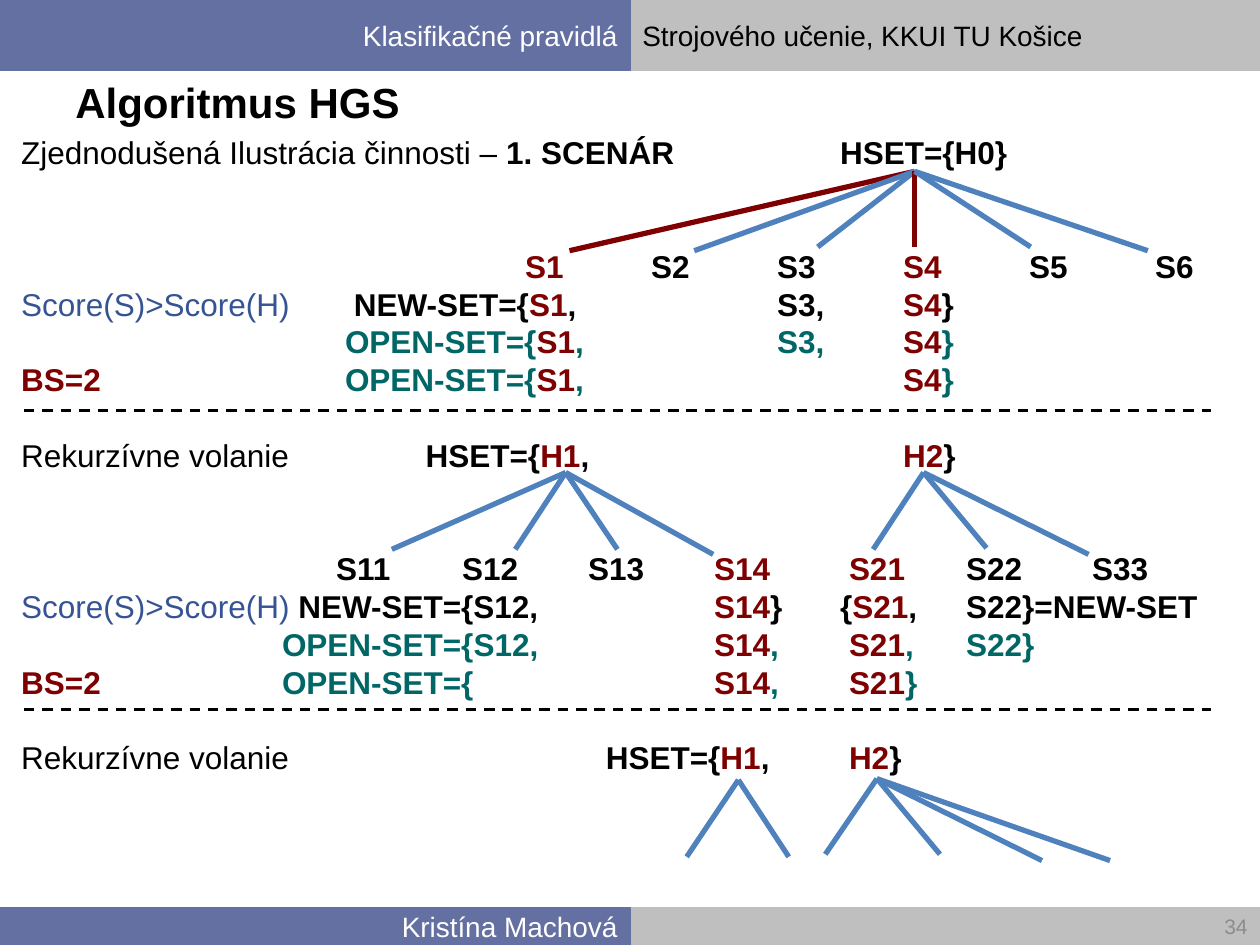
from dataclasses import dataclass

from lxml import etree
from pptx import Presentation
from pptx.dml.color import RGBColor
from pptx.enum.dml import MSO_LINE
from pptx.enum.shapes import MSO_CONNECTOR, MSO_SHAPE
from pptx.enum.text import MSO_ANCHOR, PP_ALIGN
from pptx.oxml.ns import qn
from pptx.util import Inches, Pt

LEFT, RIGHT = PP_ALIGN.LEFT, PP_ALIGN.RIGHT
TOP, MIDDLE = MSO_ANCHOR.TOP, MSO_ANCHOR.MIDDLE
RECTANGLE = MSO_SHAPE.RECTANGLE
STRAIGHT = MSO_CONNECTOR.STRAIGHT
DASH = MSO_LINE.DASH


@dataclass(frozen=True)
class Theme:
    font: str = "Arial"
    indigo: str = "6570A2"
    silver: str = "BFBFBF"
    white: str = "FFFFFF"
    black: str = "000000"
    gray: str = "8C8C8C"
    red: str = "7E0000"
    teal: str = "006666"
    navy: str = "365394"
    blue: str = "4F81BD"
    title: int = 24
    body: int = 18
    band: int = 16
    number: int = 12
    pitch: float = 21.6


THEME = Theme()
PLAIN = {"color": THEME.black}
BOLD = {"color": THEME.black, "bold": True}
RED = {"color": THEME.red, "bold": True}
TEAL = {"color": THEME.teal, "bold": True}
NAVY = {"color": THEME.navy}

SCORE = (0, [("Score(S)>Score(H)", NAVY)])
BEAM = (0, [("BS=2", RED)])
RECURSION = (0, [("Rekurzívne volanie", PLAIN)])

LINES = [
    (0, [(0, [("Zjednodušená Ilustrácia činnosti – ", PLAIN), ("1. SCENÁR", BOLD)]),
         (6.5, [("HSET={H0}", BOLD)])]),
    (2, [(stop, [(f"S{stop - 3}", RED if stop in (4, 7) else BOLD)]) for stop in range(4, 10)]),
    (0, [SCORE, (2.64, [("NEW-SET={", BOLD), ("S1", RED), (",", BOLD)]),
         (6, [("S3,", BOLD)]), (7, [("S4", RED), ("}", BOLD)])]),
    (0, [(2.57, [("OPEN-SET={", TEAL), ("S1", RED), (",", TEAL)]),
         (6, [("S3,", TEAL)]), (7, [("S4", RED), ("}", TEAL)])]),
    (0, [BEAM, (2.57, [("OPEN-SET={", TEAL), ("S1", RED), (",", TEAL)]),
         (7, [("S4", RED), ("}", TEAL)])]),
    (1, [RECURSION, (3.21, [("HSET={", BOLD), ("H1", RED), (",", BOLD)]),
         (7, [("H2", RED), ("}", BOLD)])]),
    (2, [(2.5, [("S11", BOLD)]), (3.5, [("S12", BOLD)]), (4.5, [("S13", BOLD)]),
         (5.5, [("S14", RED)]), (6.57, [("S21", RED)]), (7.5, [("S22", BOLD)]),
         (8.5, [("S33", BOLD)])]),
    (0, [SCORE, (2.2, [("NEW-SET={S12,", BOLD)]), (5.5, [("S14", RED), ("}", BOLD)]),
         (6.5, [("{", BOLD), ("S21", RED), (",", BOLD)]), (7.5, [("S22}=NEW-SET", BOLD)])]),
    (0, [(2.07, [("OPEN-SET={S12,", TEAL)]), (5.5, [("S14", RED), (",", TEAL)]),
         (6.57, [("S21", RED), (",", TEAL)]), (7.5, [("S22}", TEAL)])]),
    (0, [BEAM, (2.07, [("OPEN-SET={", TEAL)]), (5.5, [("S14", RED), (",", TEAL)]),
         (6.57, [("S21", RED), ("}", TEAL)])]),
    (1, [RECURSION, (4.64, [("HSET={", BOLD), ("H1", RED), (",", BOLD)]),
         (6.57, [("H2", RED), ("}", BOLD)])]),
]

TREES = [
    ((7.26, 1.36), [(4.52, 1.99), (5.51, 1.99), (6.49, 1.96),
                    (7.26, 1.96), (8.18, 1.96), (9.11, 1.99)], (0, 3)),
    ((4.49, 3.75), [(3.11, 4.36), (4.09, 4.36), (4.9, 4.36), (5.66, 4.4)], ()),
    ((7.33, 3.75), [(6.93, 4.36), (7.83, 4.35), (8.64, 4.4)], ()),
    ((5.86, 6.19), [(5.45, 6.8), (6.26, 6.8)], ()),
    ((6.96, 6.18), [(6.55, 6.78), (7.46, 6.78), (8.27, 6.83), (8.81, 6.83)], ()),
]


def add_text(para, text, color=THEME.black, size=THEME.body, bold=False, align=LEFT):
    para.alignment = align
    span = para.add_run()
    span.text = text
    span.font.name = THEME.font
    span.font.size = Pt(size)
    span.font.bold = bold
    span.font.color.rgb = RGBColor.from_string(color)


def add_box(page, box, anchor=MIDDLE):
    frame = page.shapes.add_textbox(*map(Inches, box)).text_frame
    frame.word_wrap = True
    frame.vertical_anchor = anchor
    return frame


def add_line(page, start, end, color, width, dash=None):
    line = page.shapes.add_connector(STRAIGHT, *map(Inches, (*start, *end)))
    line.line.color.rgb = RGBColor.from_string(color)
    line.line.width = Pt(width)
    if dash:
        line.line.dash_style = dash
    etree.SubElement(line._element.spPr, qn("a:effectLst"))


def add_panel(page, box, fill, text="", **style):
    panel = page.shapes.add_shape(RECTANGLE, *map(Inches, box))
    panel.shadow.inherit = False
    panel.fill.solid()
    panel.fill.fore_color.rgb = RGBColor.from_string(fill)
    panel.line.color.rgb = RGBColor.from_string(fill)
    panel.line.width = Pt(0.75)
    panel.text_frame.vertical_anchor = MIDDLE
    if text:
        add_text(panel.text_frame.paragraphs[0], text, size=THEME.band, **style)


def add_band(page, box, left_text, right_text=""):
    left, top, width, height = box
    half = width / 2
    add_panel(page, (left + half, top, half, height), THEME.silver, right_text)
    add_panel(page, (left, top, half, height), THEME.indigo, left_text,
              color=THEME.white, align=RIGHT)


def set_tabs(para, stops):
    tabs = etree.SubElement(para._p.get_or_add_pPr(), qn("a:tabLst"))
    for stop in stops:
        etree.SubElement(tabs, qn("a:tab"), pos=str(Inches(stop)), algn="l")


def add_scenario(page, box):
    frame = add_box(page, box, TOP)
    for index, (skipped, cells) in enumerate(LINES):
        para = frame.add_paragraph() if index else frame.paragraphs[0]
        para.line_spacing = Pt(THEME.pitch)
        para.space_before = Pt(skipped * THEME.pitch)
        set_tabs(para, [stop for stop, _ in cells if stop])
        for stop, spans in cells:
            for order, (text, style) in enumerate(spans):
                lead = "\t" if stop and order == 0 else ""
                add_text(para, lead + text, **style)


def add_tree(page, root, tips, chosen):
    for index, tip in enumerate(tips):
        add_line(page, root, tip, THEME.red if index in chosen else THEME.blue, 3)


def main():
    deck = Presentation()
    deck.slide_width, deck.slide_height = Inches(10), Inches(7.5)
    page = deck.slides.add_slide(deck.slide_layouts[6])
    add_band(page, (0, 0, 10, 0.56), "Klasifikačné pravidlá", "Strojového učenie, KKUI TU Košice")
    add_band(page, (0, 7.2, 10, 0.3), "Kristína Machová")
    title = add_box(page, (0.5, 0.56, 9, 0.5))
    add_text(title.paragraphs[0], "Algoritmus HGS", size=THEME.title, bold=True)
    number = add_box(page, (6.58, 7.2, 3.42, 0.3))
    add_text(number.paragraphs[0], "34", color=THEME.gray, size=THEME.number, align=RIGHT)
    add_scenario(page, (0.07, 1.01, 9.87, 5.55))
    for tree in TREES:
        add_tree(page, *tree)
    for height in (3.26, 5.63):
        add_line(page, (0.19, height), (9.61, height), THEME.black, 1.5, DASH)
    deck.save("out.pptx")


if __name__ == "__main__":
    main()
